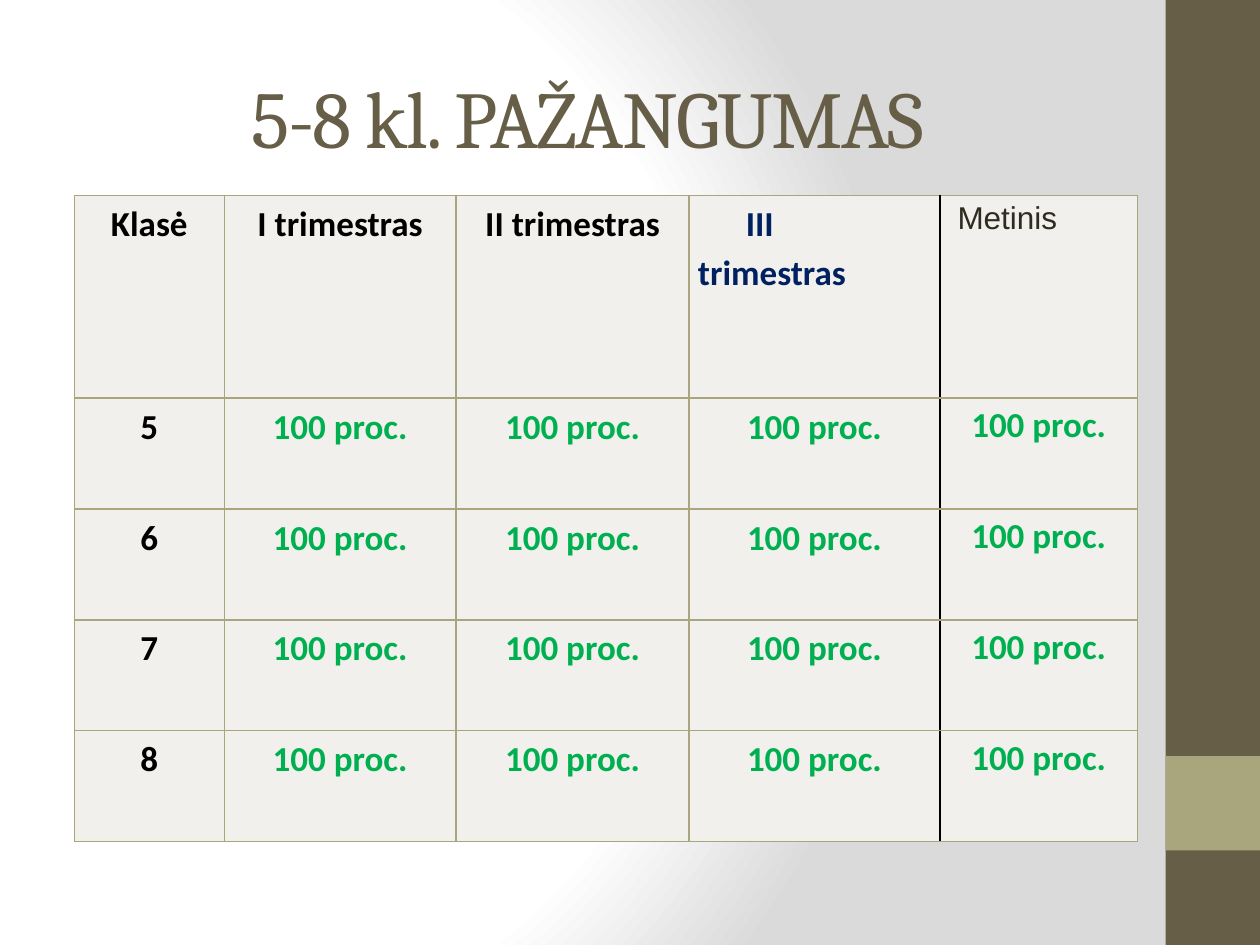
"""Build the slide with the term progress table of classes 5-8."""
from dataclasses import dataclass

from pptx import Presentation
from pptx.dml.color import RGBColor
from pptx.enum.shapes import MSO_SHAPE
from pptx.enum.text import MSO_ANCHOR, PP_ALIGN
from pptx.oxml import parse_xml
from pptx.oxml.ns import nsdecls, qn
from pptx.util import Inches, Pt

RECTANGLE = MSO_SHAPE.RECTANGLE
MIDDLE, TOP = MSO_ANCHOR.MIDDLE, MSO_ANCHOR.TOP
LEFT, CENTER = PP_ALIGN.LEFT, PP_ALIGN.CENTER

BROWN = RGBColor(0x67, 0x5E, 0x47)
OLIVE = RGBColor(0xA9, 0xA5, 0x7C)
CELL_FILL = RGBColor(0xF1, 0xF0, 0xEC)
BLACK = RGBColor(0, 0, 0)
NAVY = RGBColor(0x00, 0x20, 0x60)
DARK = RGBColor(0x2F, 0x2B, 0x20)
GREEN = RGBColor(0x00, 0xB0, 0x50)
WHITE = RGBColor(0xFF, 0xFF, 0xFF)
GREY = RGBColor(0xDA, 0xDA, 0xDA)

COLUMN_WIDTHS = (1.19, 1.84, 1.85, 1.99, 1.57)
ROW_HEIGHTS = (1.61, 0.88, 0.88, 0.88, 0.88)
LAST_COLUMN = len(COLUMN_WIDTHS) - 1
BACKGROUND_STOPS = ((0, WHITE), (75, WHITE), (100, GREY))


@dataclass(frozen=True)
class Band:
    top: float
    height: float
    color: RGBColor


@dataclass(frozen=True)
class Entry:
    text: str
    color: RGBColor = BLACK
    size: int = 20
    font: str = "Calibri"
    bold: bool = True
    align: PP_ALIGN = CENTER
    indent: float = 0
    margin_right: float = 0.07


BANDS = (Band(0, 7.5, BROWN), Band(6, 0.75, OLIVE))
HEADER = (
    Entry("Klasė"),
    Entry("I trimestras"),
    Entry("II trimestras"),
    Entry("III trimestras", NAVY, align=LEFT, indent=0.38, margin_right=0.2),
    Entry("Metinis", DARK, 18, "Arial", False, LEFT, indent=0.14),
)
CLASS_ROWS = tuple(
    (Entry(str(number)),) + (Entry("100 proc.", GREEN),) * LAST_COLUMN
    for number in range(5, 9)
)


def set_values(target, values: dict) -> None:
    for name, value in values.items():
        setattr(target, name, value)


def paint_background(page) -> None:
    page.background.fill.solid()
    stops = "".join(
        f'<a:gs pos="{position * 1000}"><a:srgbClr val="{color}"/></a:gs>'
        for position, color in BACKGROUND_STOPS
    )
    gradient = parse_xml(
        f'<a:gradFill {nsdecls("a")} rotWithShape="1"><a:gsLst>{stops}</a:gsLst>'
        '<a:path path="circle">'
        '<a:fillToRect l="20000" t="50000" r="100000" b="50000"/>'
        "</a:path></a:gradFill>"
    )
    properties = page.element.find(".//" + qn("p:bgPr"))
    properties.replace(properties[0], gradient)


def add_band(page, band: Band) -> None:
    box = page.shapes.add_shape(
        RECTANGLE, Inches(9.25), Inches(band.top), Inches(0.75), Inches(band.height)
    )
    box.shadow.inherit = False
    box.fill.solid()
    box.fill.fore_color.rgb = band.color
    box.line.fill.background()


def write_title(page) -> None:
    box = page.shapes.title
    set_values(box, {"left": Inches(0.5), "top": Inches(0.3),
                     "width": Inches(8.33), "height": Inches(1.25)})
    box.text_frame.vertical_anchor = MIDDLE
    para = box.text_frame.paragraphs[0]
    para.alignment = CENTER
    span = para.add_run()
    span.text = "5-8 kl. PAŽANGUMAS"
    set_values(span.font, {"name": "Cambria", "size": Pt(46)})
    span.font.color.rgb = BROWN
    span.font._element.set("spc", "-100")


def draw_borders(cell, column: int) -> None:
    colors = {
        "lnL": BLACK if column == LAST_COLUMN else OLIVE,
        "lnR": BLACK if column == LAST_COLUMN - 1 else OLIVE,
        "lnT": OLIVE,
        "lnB": OLIVE,
    }
    properties = cell._tc.get_or_add_tcPr()
    for position, (side, color) in enumerate(colors.items()):
        properties.insert(position, parse_xml(
            f'<a:{side} {nsdecls("a")} w="{Pt(1)}"><a:solidFill>'
            f'<a:srgbClr val="{color}"/></a:solidFill></a:{side}>'
        ))


def fill_cell(cell, entry: Entry, column: int) -> None:
    last = column == LAST_COLUMN
    set_values(cell, {
        "margin_left": Inches(0 if last else 0.07),
        "margin_right": Inches(0 if last else entry.margin_right),
        "margin_top": Inches(0 if last else 0.01),
        "margin_bottom": 0,
        "vertical_anchor": TOP,
    })
    cell.fill.solid()
    cell.fill.fore_color.rgb = CELL_FILL
    draw_borders(cell, column)
    para = cell.text_frame.paragraphs[0]
    set_values(para, {"alignment": entry.align, "line_spacing": 1.15})
    if entry.indent:
        para._p.get_or_add_pPr().set("indent", str(Inches(entry.indent)))
    span = para.add_run()
    span.text = entry.text
    set_values(span.font, {"name": entry.font, "size": Pt(entry.size), "bold": entry.bold})
    span.font.color.rgb = entry.color


def add_progress_table(page) -> None:
    table = page.shapes.add_table(
        len(ROW_HEIGHTS), len(COLUMN_WIDTHS), Inches(0.59), Inches(1.55),
        Inches(sum(COLUMN_WIDTHS)), Inches(sum(ROW_HEIGHTS)),
    ).table
    set_values(table, {"first_row": False, "horz_banding": False})
    for column, width in zip(table.columns, COLUMN_WIDTHS):
        column.width = Inches(width)
    for row, height in zip(table.rows, ROW_HEIGHTS):
        row.height = Inches(height)
    for row, entries in zip(table.rows, (HEADER, *CLASS_ROWS)):
        for column, entry in enumerate(entries):
            fill_cell(row.cells[column], entry, column)


def main() -> None:
    deck = Presentation()
    set_values(deck, {"slide_width": Inches(10), "slide_height": Inches(7.5)})
    page = deck.slides.add_slide(deck.slide_layouts.get_by_name("Title Only"))
    paint_background(page)
    for band in BANDS:
        add_band(page, band)
    write_title(page)
    add_progress_table(page)
    deck.save("out.pptx")


if __name__ == "__main__":
    main()
